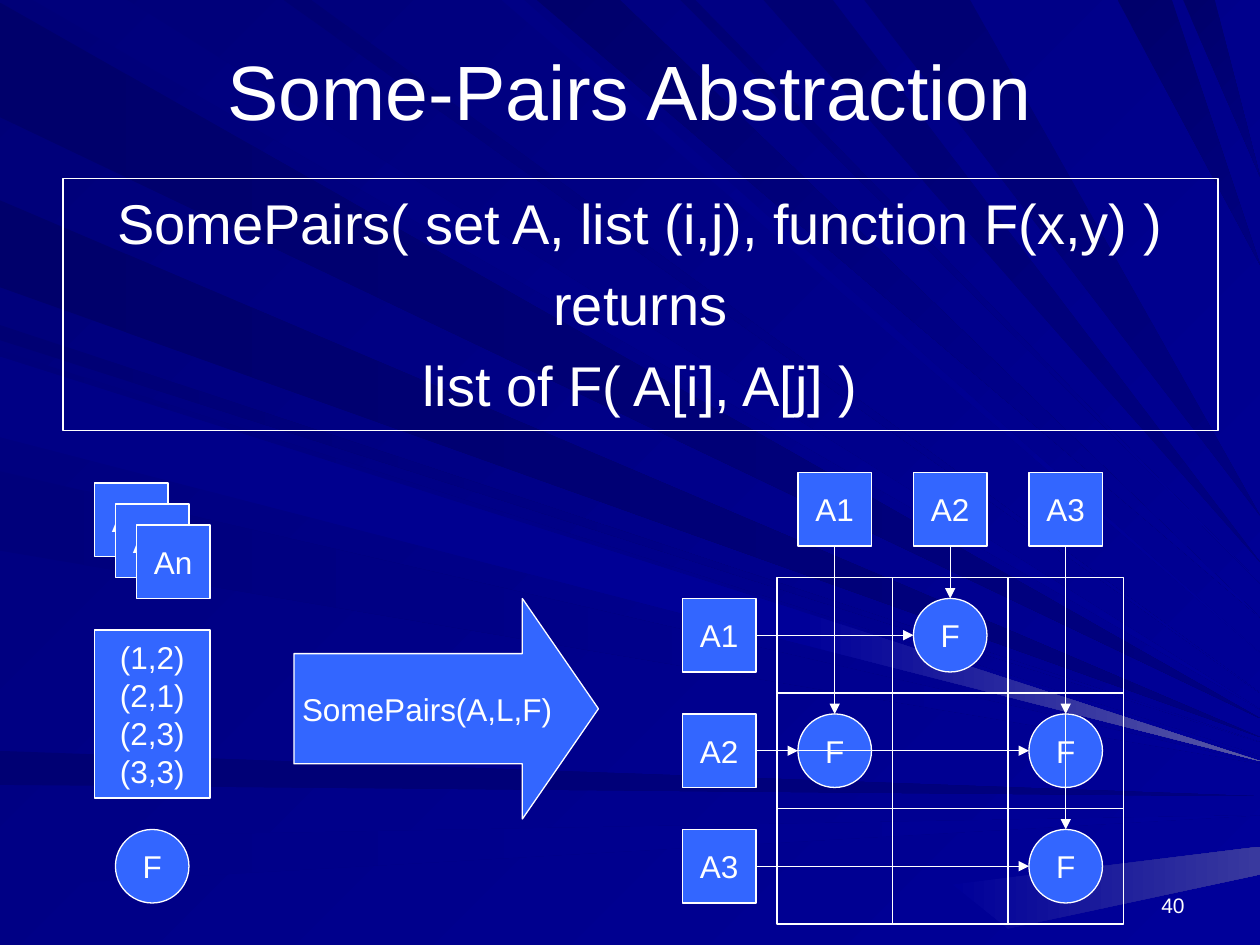
"""Build the Some-Pairs Abstraction slide."""
from typing import NamedTuple

from lxml import etree
from pptx import Presentation
from pptx.dml.color import RGBColor
from pptx.enum.shapes import MSO_CONNECTOR, MSO_SHAPE
from pptx.enum.text import MSO_ANCHOR, PP_ALIGN
from pptx.oxml.ns import qn
from pptx.util import Cm, Pt

RECT, OVAL, ARROW = MSO_SHAPE.RECTANGLE, MSO_SHAPE.OVAL, MSO_SHAPE.RIGHT_ARROW
STRAIGHT = MSO_CONNECTOR.STRAIGHT
TOP, MIDDLE, BOTTOM = MSO_ANCHOR.TOP, MSO_ANCHOR.MIDDLE, MSO_ANCHOR.BOTTOM
CENTER, RIGHT = PP_ALIGN.CENTER, PP_ALIGN.RIGHT
BOTTOM_SITE, RIGHT_SITE = 2, 3

COLOURS = {
    "white": "FFFFFF", "box": "3366FF", "deep": "00006B", "dark": "000073",
    "night": "000078", "mid": "00007B", "edge": "000080", "dim": "000085",
    "bright": "000099", "haze": "39399E", "glow": "5A5AA6",
}
PAIRS = [(1, 2), (2, 1), (2, 3), (3, 3)]
NODE, CELL, GRID_LEFT, GRID_TOP = 7, 11, 74, 55
ROW_LABEL_LEFT, COLUMN_LABEL_TOP = 65, 45
INSET = (CELL - NODE) // 2
RAY_TIP_X = 1000


class Ray(NamedTuple):
    """A beam from a stretch of a slide edge to a height on the right edge."""
    from_top: bool
    start: int
    end: int
    tip: int
    shade: str
    light: str = "bright"

    def outline(self) -> list:
        """Give the corners in hundredths of 2.54 cm."""
        base = [(place, 0) if self.from_top else (0, place)
                for place in (self.start, self.end)]
        return base + [(RAY_TIP_X, self.tip)]


class Box(NamedTuple):
    """A shape with text, placed in layout units."""
    left: int
    top: int
    width: int
    height: int
    text: str = ""
    kind: MSO_SHAPE = RECT
    fill: str = "box"


class TextStyle(NamedTuple):
    """The format values of a text frame and its paragraphs."""
    size: int = 18
    frame: dict = {"word_wrap": False, "vertical_anchor": MIDDLE}
    align: PP_ALIGN = CENTER
    gap: int = 0
    hanging: float = 0


TITLE_STYLE = TextStyle(44, {"word_wrap": True, "vertical_anchor": MIDDLE})
DEFINITION_STYLE = TextStyle(
    32, {"word_wrap": True, "vertical_anchor": TOP, "margin_top": Cm(0.2)},
    gap=8, hanging=0.95)
NUMBER_STYLE = TextStyle(
    12, {"word_wrap": True, "vertical_anchor": BOTTOM}, RIGHT)

RAYS = [
    Ray(False, 2, 93, 570, "deep", "edge"),
    Ray(True, 26, 101, 563, "mid"),
    Ray(False, 596, 623, 632, "dark", "edge"),
    Ray(False, 665, 704, 647, "dim"),
    Ray(False, 258, 270, 589, "dark"),
    Ray(False, 159, 228, 585, "deep", "edge"),
    Ray(True, 398, 416, 518, "dim"),
    Ray(True, 426, 492, 490, "deep"),
    Ray(True, 540, 552, 463, "dark"),
    Ray(True, 606, 661, 446, "dark", "edge"),
    Ray(True, 887, 930, 210, "deep", "edge"),
    Ray(True, 939, 964, 140, "deep", "edge"),
    Ray(False, 278, 342, 600, "mid"),
    Ray(False, 374, 437, 606, "mid"),
    Ray(True, 225, 247, 550, "dark"),
    Ray(True, 686, 770, 409, "dark", "edge"),
]
GLOWS = {
    ("dim", "bright"): [(0, 283), (0, 347), (635, 511), (635, 485)],
    ("bright", "glow"): [(635, 485), (635, 511), (RAY_TIP_X, 604)],
    ("bright", "haze"): [(756, 702), (800, 737), (RAY_TIP_X, 694), (RAY_TIP_X, 672)],
}


def colour(name: str) -> RGBColor:
    """Look up a colour by name."""
    return RGBColor.from_string(COLOURS[name])


def units(count: float) -> Cm:
    """Convert layout units, 120 to the slide width, to a length."""
    return Cm(25.4 * count / 120)


def paint(fill, start: str, end: str, angle: int = 0) -> None:
    """Fill with one colour or a two-colour clockwise gradient."""
    if start == end:
        fill.solid()
        fill.fore_color.rgb = colour(start)
        return
    fill.gradient()
    fill.gradient_angle = (360 - angle) % 360
    for stop, name in zip(fill.gradient_stops, (start, end)):
        stop.color.rgb = colour(name)


def draw_beam(slide, outline: list, shade: str, light: str, angle: int = 0) -> None:
    """Draw one background beam."""
    builder = slide.shapes.build_freeform(*outline[0], scale=Cm(2.54) / 100)
    builder.add_line_segments(outline[1:], close=True)
    beam = builder.convert_to_shape()
    beam.shadow.inherit = False
    beam.line.fill.background()
    paint(beam.fill, shade, light, angle)


def write(shape, text: str, style: TextStyle) -> None:
    """Write and format the text of a shape."""
    frame = shape.text_frame
    frame.text = text
    for name, value in style.frame.items():
        setattr(frame, name, value)
    for index, paragraph in enumerate(frame.paragraphs):
        paragraph.alignment = style.align
        if style.hanging:
            properties = paragraph._p.get_or_add_pPr()
            properties.set("marL", str(Cm(style.hanging)))
            properties.set("indent", str(-Cm(style.hanging)))
        if index and style.gap:
            paragraph.space_before = Pt(style.gap)
        for name, value in {"name": "Arial", "size": Pt(style.size)}.items():
            setattr(paragraph.font, name, value)
        paragraph.font.color.rgb = colour("white")


def draw_box(slide, box: Box, style: TextStyle = TextStyle()):
    """Draw an outlined shape with optional fill and text."""
    shape = slide.shapes.add_shape(box.kind, *map(units, box[:4]))
    shape.shadow.inherit = False
    shape.line.color.rgb, shape.line.width = colour("white"), Pt(0.75)
    if box.fill:
        paint(shape.fill, box.fill, box.fill)
    else:
        shape.fill.background()
    if box.text:
        write(shape, box.text, style)
    return shape


def draw_caption(slide, text: str, place: tuple, style: TextStyle) -> None:
    """Draw a plain text box."""
    write(slide.shapes.add_textbox(*map(units, place)), text, style)


def draw_arrow(slide, label, site: int, x: float, y: float) -> None:
    """Draw an arrow from a side of a label to a point."""
    arrow = slide.shapes.add_connector(STRAIGHT, 0, 0, units(x), units(y))
    arrow.begin_connect(label, site)
    arrow.line.color.rgb, arrow.line.width = colour("white"), Pt(0.75)
    etree.SubElement(arrow.line._get_or_add_ln(), qn("a:tailEnd"), type="triangle")
    etree.SubElement(arrow._element.spPr, qn("a:effectLst"))


def node_at(row: int, column: int) -> tuple:
    """Give the left and top of the node in a matrix cell."""
    return (GRID_LEFT + (column - 1) * CELL + INSET,
            GRID_TOP + (row - 1) * CELL + INSET)


def draw_matrix(slide) -> None:
    """Draw the labelled matrix with a function node for each pair."""
    rows, columns = {}, {}
    for i in range(1, 4):
        x, y = node_at(i, i)
        rows[i] = draw_box(slide, Box(ROW_LABEL_LEFT, y, NODE, NODE, f"A{i}"))
        columns[i] = draw_box(slide, Box(x, COLUMN_LABEL_TOP, NODE, NODE, f"A{i}"))
        for j in range(3):
            draw_box(slide, Box(GRID_LEFT + j * CELL, y - INSET, CELL, CELL, fill=""))
    for pair in PAIRS:
        draw_box(slide, Box(*node_at(*pair), NODE, NODE, "F", OVAL))
    for row, column in PAIRS:
        x, y = node_at(row, column)
        draw_arrow(slide, rows[row], RIGHT_SITE, x, y + NODE / 2)
        draw_arrow(slide, columns[column], BOTTOM_SITE, x + NODE / 2, y)


def main() -> None:
    """Build and save the slide."""
    deck = Presentation()
    deck.slide_width, deck.slide_height = Cm(25.4), Cm(19.05)
    slide = deck.slides.add_slide(deck.slide_layouts[6])
    paint(slide.background.fill, "night", "bright", 45)
    for ray in RAYS:
        draw_beam(slide, ray.outline(), ray.shade, ray.light, 45 * ray.from_top)
    for shades, outline in GLOWS.items():
        draw_beam(slide, outline, *shades)
    draw_caption(slide, "40", (86, 82, 28, 6), NUMBER_STYLE)
    draw_caption(slide, "Some-Pairs Abstraction", (6, 1, 108, 15), TITLE_STYLE)
    definition = ("SomePairs( set A, list (i,j), function F(x,y) )\n"
                  "returns\nlist of F( A[i], A[j] )")
    draw_box(slide, Box(6, 17, 110, 24, definition, fill=""), DEFINITION_STYLE)
    draw_matrix(slide)
    for step, member in enumerate(("A1", "A1", "An")):
        draw_box(slide, Box(9 + 2 * step, 46 + 2 * step, NODE, NODE, member))
    draw_box(slide, Box(9, 60, 11, 16, "\n".join(f"({i},{j})" for i, j in PAIRS)))
    draw_box(slide, Box(11, 79, NODE, NODE, "F", OVAL))
    call = draw_box(slide, Box(28, 57, 29, 21, "SomePairs(A,L,F)", ARROW))
    call.adjustments[1] = 0.345
    deck.save("out.pptx")


if __name__ == "__main__":
    main()
